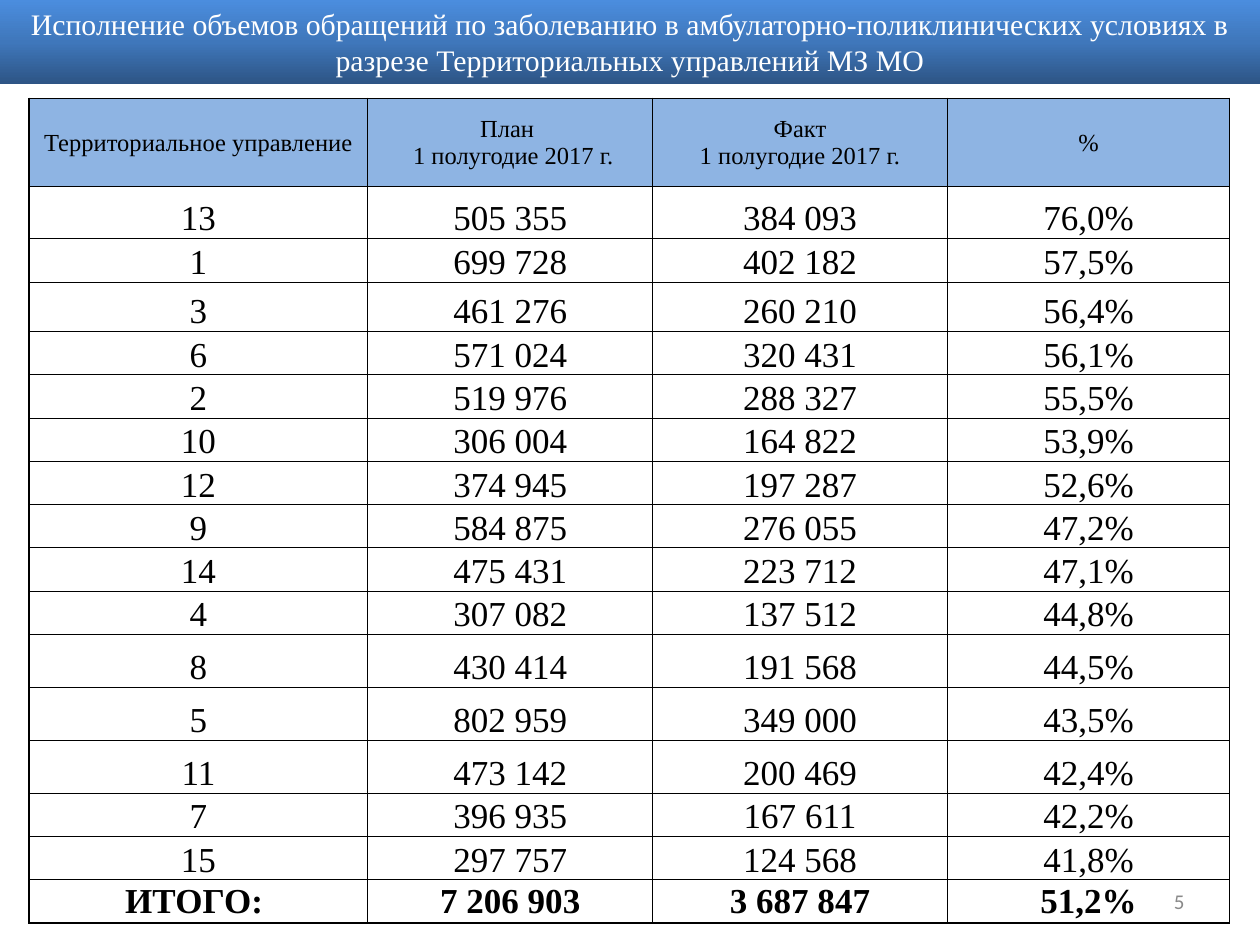
from copy import deepcopy

from lxml import etree
from pptx import Presentation
from pptx import util as u
from pptx.dml.color import RGBColor
from pptx.enum import shapes, text
from pptx.oxml.ns import qn

COLORS = {
    "black": "000000",
    "white": "FFFFFF",
    "grey": "898989",
    "header": "8EB4E3",
    "bar_dark": "2D5484",
    "bar_mid": "3F77BB",
    "bar_light": "4B8DDE",
}
SERIF, SANS = "Times New Roman", "Calibri"

TITLE = ("Исполнение объемов обращений по заболеванию в амбулаторно-поликлинических "
         "условиях в разрезе Территориальных управлений МЗ МО")
HEADER = ["Территориальное управление", "План \n 1 полугодие 2017 г.",
          "Факт\n1 полугодие 2017 г.", "%"]
ROWS = [
    ("13", "505 355", "384 093", "76,0%"),
    ("1", "699 728", "402 182", "57,5%"),
    ("3", "461 276", "260 210", "56,4%"),
    ("6", "571 024", "320 431", "56,1%"),
    ("2", "519 976", "288 327", "55,5%"),
    ("10", "306 004", "164 822", "53,9%"),
    ("12", "374 945", "197 287", "52,6%"),
    ("9", "584 875", "276 055", "47,2%"),
    ("14", "475 431", "223 712", "47,1%"),
    ("4", "307 082", "137 512", "44,8%"),
    ("8", "430 414", "191 568", "44,5%"),
    ("5", "802 959", "349 000", "43,5%"),
    ("11", "473 142", "200 469", "42,4%"),
    ("7", "396 935", "167 611", "42,2%"),
    ("15", "297 757", "124 568", "41,8%"),
]
TOTAL = ("ИТОГО: ", "7 206 903", "3 687 847", "51,2%")
COL_WIDTHS = [2.69, 2.26, 2.34, 2.24]
ROW_HEIGHTS = [0.7, 0.41, 0.35, 0.39] + [0.34] * 7 + [0.42] * 3 + [0.34] * 3


def rgb(name):
    return RGBColor.from_string(COLORS[name])


class SlideBuilder:
    def __init__(self, s):
        self.s = s

    def add_text(self, tf, content, size, color="black", font=SERIF, bold=False,
                 align=text.PP_ALIGN.CENTER):
        p = tf.paragraphs[0]
        p.alignment = align
        for i, line in enumerate(content.split("\n")):
            if i:
                p.add_line_break()
            r = p.add_run()
            r.text = line
            r.font.size = u.Pt(size)
            r.font.name = font
            r.font.bold = bold
            r.font.color.rgb = rgb(color)

    def gradient_bar(self, x, y, w, h, content, size, stops):
        sp = self.s.shapes.add_shape(shapes.MSO_SHAPE.RECTANGLE, *map(u.Inches, (x, y, w, h)))
        sp.shadow.inherit = False
        sp.line.fill.background()
        sp.fill.gradient()
        sp.fill.gradient_angle = 90
        # The default gradient has two stops, so a third is added
        gs_list = sp._element.spPr.find(".//" + qn("a:gsLst"))
        gs_list.append(deepcopy(gs_list[-1]))
        for stop, (position, color) in zip(sp.fill.gradient_stops, stops):
            stop.position = position
            stop.color.rgb = rgb(color)
        tf = sp.text_frame
        tf.word_wrap = True
        tf.vertical_anchor = text.MSO_ANCHOR.TOP
        self.add_text(tf, content, size, "white")

    def label(self, x, y, w, h, content, size, color):
        tf = self.s.shapes.add_textbox(*map(u.Inches, (x, y, w, h))).text_frame
        tf.word_wrap = True
        tf.vertical_anchor = text.MSO_ANCHOR.MIDDLE
        self.add_text(tf, content, size, color, SANS, align=text.PP_ALIGN.RIGHT)

    def borders(self, cell, widths):
        tcPr = cell._tc.get_or_add_tcPr()
        for i, (side, width) in enumerate(zip("LRTB", widths)):
            ln = etree.Element(qn("a:ln" + side), w=str(u.Pt(width)))
            fill = etree.SubElement(ln, qn("a:solidFill"))
            etree.SubElement(fill, qn("a:srgbClr"), val=COLORS["black"])
            tcPr.insert(i, ln)

    def table(self, x, y, widths, heights, data):
        last = len(data) - 1
        frame = self.s.shapes.add_table(
            len(data), len(widths),
            *map(u.Inches, (x, y, sum(widths), sum(heights))))
        tbl = frame.table
        for col, width in zip(tbl.columns, widths):
            col.width = u.Inches(width)
        for row, height in zip(tbl.rows, heights):
            row.height = u.Inches(height)
        for i, values in enumerate(data):
            for j, value in enumerate(values):
                cell = tbl.cell(i, j)
                inset = 0 if i == last and j else 0.01
                cell.margin_left = cell.margin_right = cell.margin_top = u.Inches(inset)
                cell.margin_bottom = 0
                cell.vertical_anchor = (text.MSO_ANCHOR.MIDDLE if i in (0, last)
                                        else text.MSO_ANCHOR.BOTTOM)
                if i == 0:
                    cell.fill.solid()
                    cell.fill.fore_color.rgb = rgb("header")
                else:
                    cell.fill.background()
                self.add_text(cell.text_frame, value, 20 if i else 14, bold=i == last)
                self.borders(cell, (0.5 if j else 1, 0.5, 0.5 if i else 1,
                                    1 if i == last else 0.5))


def main():
    prs = Presentation()
    prs.slide_width, prs.slide_height = u.Inches(10), u.Inches(7.5)
    b = SlideBuilder(prs.slides.add_slide(prs.slide_layouts[6]))

    # Slide number
    b.label(7.17, 6.95, 2.33, 0.4, "5", 12, "grey")
    # Plan and fact by territorial office
    b.table(0.23, 0.78, COL_WIDTHS, ROW_HEIGHTS, [HEADER, *ROWS, TOTAL])
    # Title bar
    b.gradient_bar(0, 0, 10, 0.67, TITLE, 17,
                   [(0, "bar_dark"), (0.5, "bar_mid"), (1, "bar_light")])

    prs.save("out.pptx")


if __name__ == "__main__":
    main()
